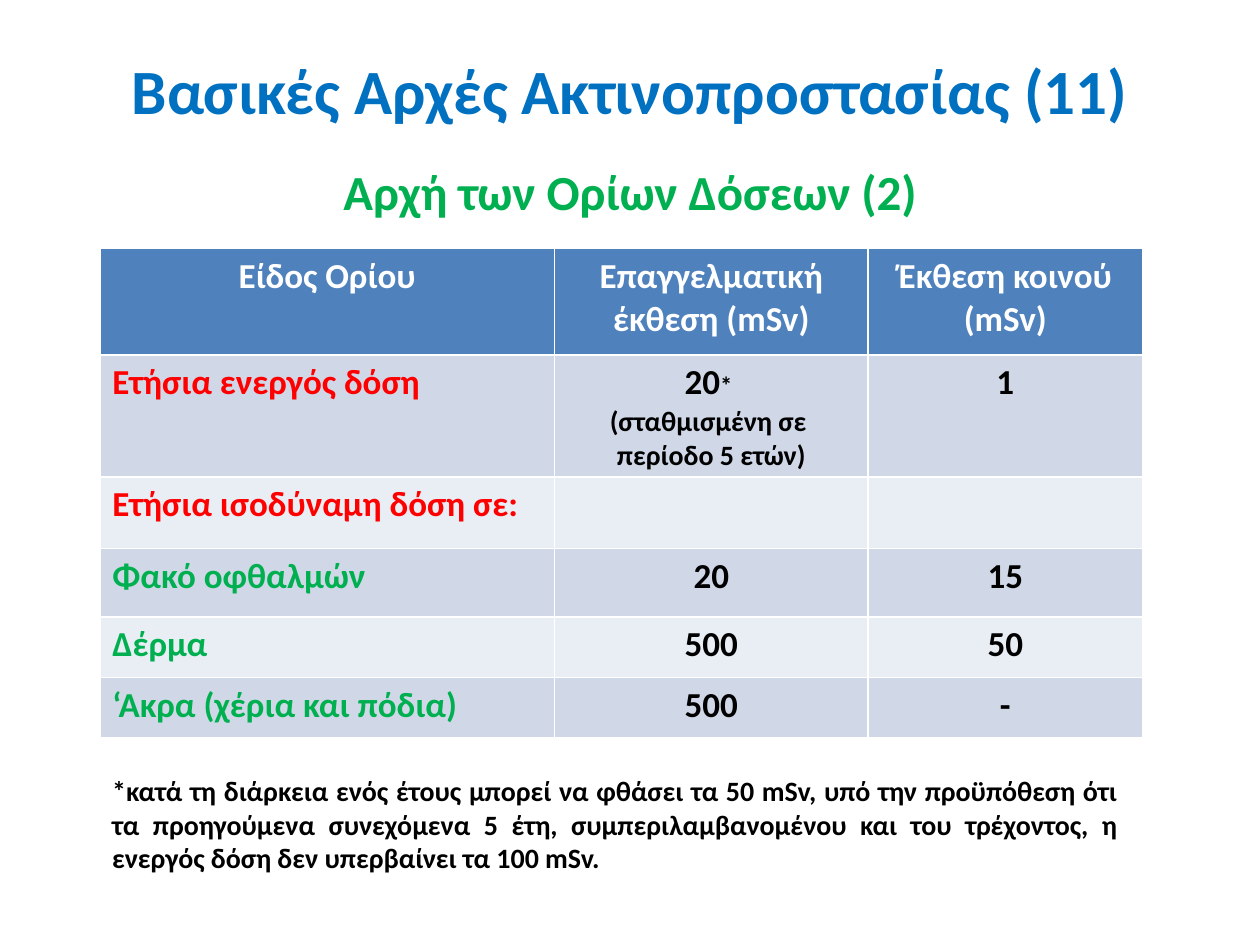
from pptx import Presentation
from pptx.dml.color import RGBColor
from pptx.enum.text import MSO_ANCHOR, MSO_AUTO_SIZE, PP_ALIGN
from pptx.util import Pt

FONT = "Calibri"
BLUE = RGBColor(0x00, 0x70, 0xC0)
GREEN = RGBColor(0x00, 0xB0, 0x50)
RED = RGBColor(0xFF, 0x00, 0x00)
BLACK = RGBColor(0x00, 0x00, 0x00)
WHITE = RGBColor(0xFF, 0xFF, 0xFF)
HEADER_FILL = RGBColor(0x4F, 0x81, 0xBD)
BAND_FILLS = [RGBColor(0xD0, 0xD8, 0xE8), RGBColor(0xE9, 0xED, 0xF4)]

TITLE = "Βασικές Αρχές Ακτινοπροστασίας (11)"
SUBTITLE = "Αρχή των Ορίων Δόσεων (2)"
FOOTNOTE = (
    "*κατά τη διάρκεια ενός έτους μπορεί να φθάσει τα 50 mSv, υπό την προϋπόθεση ότι "
    "τα προηγούμενα συνεχόμενα 5 έτη, συμπεριλαμβανομένου και του τρέχοντος, η "
    "ενεργός δόση δεν υπερβαίνει τα 100 mSv."
)

HEADERS = ["Είδος Ορίου", "Επαγγελματική έκθεση (mSv)", "Έκθεση κοινού (mSv)"]
WEIGHTED_LIMIT = [
    [("20", 20), ("* ", 14)],
    [("(σταθμισμένη σε ", 16)],
    [("περίοδο 5 ετών)", 16)],
]
# Label, label colour, occupational limit, public limit
LIMITS = [
    ("Ετήσια ενεργός δόση", RED, WEIGHTED_LIMIT, "1"),
    ("Ετήσια ισοδύναμη δόση σε:", RED, "", ""),
    ("Φακό οφθαλμών", GREEN, "20", "15"),
    ("Δέρμα", GREEN, "500", "50"),
    ("‘Ακρα (χέρια και πόδια)", GREEN, "500", "-"),
]
COLUMN_WIDTHS = [260, 179, 157]
ROW_HEIGHTS = [61, 43, 41, 39, 34.5, 34.5]


def write(frame, lines, color, align):
    """Fill a text frame; each line is a list of (text, size) runs."""
    for index, line in enumerate(lines):
        para = frame.paragraphs[0] if index == 0 else frame.add_paragraph()
        para.alignment = align
        for text, size in line:
            span = para.add_run()
            span.text = text
            span.font.name = FONT
            span.font.size = Pt(size)
            span.font.bold = True
            span.font.color.rgb = color


def place_title(page, left, top, width, height):
    title = page.shapes.title
    title.left, title.top = Pt(left), Pt(top)
    title.width, title.height = Pt(width), Pt(height)
    frame = title.text_frame
    frame.auto_size = MSO_AUTO_SIZE.NONE
    frame.vertical_anchor = MSO_ANCHOR.MIDDLE
    write(frame, [[(TITLE, 36)]], BLUE, PP_ALIGN.CENTER)
    frame.paragraphs[0].line_spacing = 0.9


def place_text(page, left, top, width, height, text, size, color, align):
    box = page.shapes.add_textbox(Pt(left), Pt(top), Pt(width), Pt(height))
    frame = box.text_frame
    frame.word_wrap = True
    frame.auto_size = MSO_AUTO_SIZE.SHAPE_TO_FIT_TEXT
    write(frame, [[(text, size)]], color, align)


def fill_cell(cell, content, fill, color, align=PP_ALIGN.CENTER):
    cell.fill.solid()
    cell.fill.fore_color.rgb = fill
    if content:
        lines = [[(content, 20)]] if isinstance(content, str) else content
        write(cell.text_frame, lines, color, align)


def place_limits_table(page, left, top):
    table = page.shapes.add_table(
        len(ROW_HEIGHTS), len(COLUMN_WIDTHS), Pt(left), Pt(top),
        Pt(sum(COLUMN_WIDTHS)), Pt(sum(ROW_HEIGHTS)),
    ).table
    for column, width in zip(table.columns, COLUMN_WIDTHS):
        column.width = Pt(width)
    for row, height in zip(table.rows, ROW_HEIGHTS):
        row.height = Pt(height)

    for column, header in enumerate(HEADERS):
        fill_cell(table.cell(0, column), header, HEADER_FILL, WHITE)
    for row, (label, color, *limits) in enumerate(LIMITS, start=1):
        band = BAND_FILLS[(row - 1) % 2]
        fill_cell(table.cell(row, 0), label, band, color, PP_ALIGN.LEFT)
        for column, limit in enumerate(limits, start=1):
            fill_cell(table.cell(row, column), limit, band, BLACK)


def main():
    deck = Presentation()
    deck.slide_width, deck.slide_height = Pt(720), Pt(540)
    page = deck.slides.add_slide(deck.slide_layouts.get_by_name("Title Only"))
    place_title(page, 0, 28.8, 720, 50.4)
    place_text(page, 0, 88.5, 720, 41, SUBTITLE, 28, GREEN, PP_ALIGN.CENTER)
    place_limits_table(page, 57, 142)
    place_text(page, 57, 438.5, 589, 65.5, FOOTNOTE, 16, BLACK, PP_ALIGN.JUSTIFY)
    deck.save("out.pptx")


if __name__ == "__main__":
    main()
